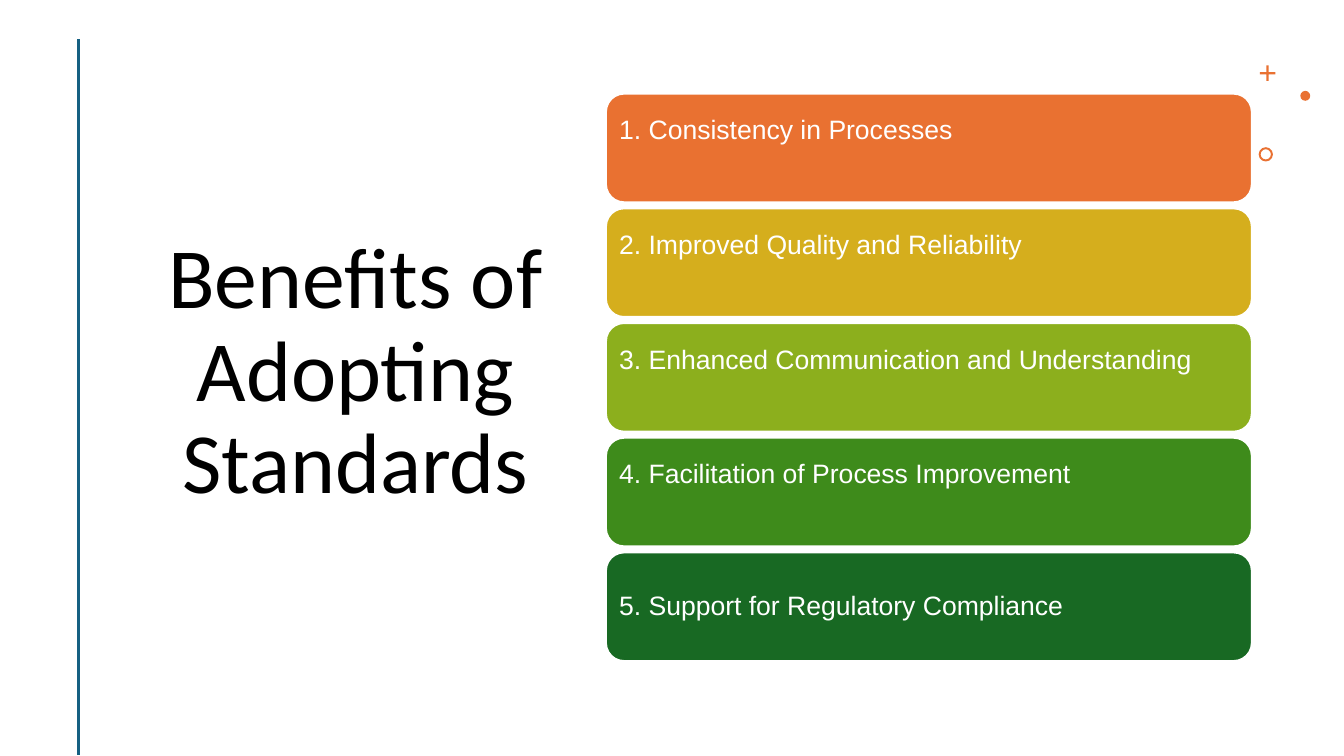
from lxml import etree
from pptx import Presentation
from pptx.dml.color import RGBColor
from pptx.enum.shapes import MSO_CONNECTOR, MSO_SHAPE
from pptx.enum.text import MSO_ANCHOR, MSO_AUTO_SIZE, PP_ALIGN
from pptx.oxml.ns import qn
from pptx.util import Cm, Pt

ROUNDED, CROSS = MSO_SHAPE.ROUNDED_RECTANGLE, MSO_SHAPE.CROSS
OVAL, DONUT = MSO_SHAPE.OVAL, MSO_SHAPE.DONUT
STRAIGHT = MSO_CONNECTOR.STRAIGHT
MIDDLE, NO_FIT = MSO_ANCHOR.MIDDLE, MSO_AUTO_SIZE.NONE
LEFT, CENTER = PP_ALIGN.LEFT, PP_ALIGN.CENTER
TITLE_ONLY = 5

TITLE = "Benefits of Adopting Standards"
# benefit, colour, extra room below the text in cm
BENEFITS = [
    ("1. Consistency in Processes", "orange", 0.84),
    ("2. Improved Quality and Reliability", "gold", 0.84),
    ("3. Enhanced Communication and Understanding", "lime", 0.84),
    ("4. Facilitation of Process Improvement", "green", 0.84),
    ("5. Support for Regulatory Compliance", "forest", 0),
]
# shape, left, top, size in cm, adjustments
ORNAMENTS = [
    (CROSS, 31.75, 1.65, 0.39, [0.43]),
    (OVAL, 32.77, 2.29, 0.25, []),
    (DONUT, 31.72, 3.71, 0.36, [0.14]),
]
COLORS = {
    "orange": "E97131", "gold": "D5AE1D", "lime": "8CAF1D",
    "green": "3E8B1B", "forest": "186923", "accent": "E97132",
    "rule": "156082", "black": "000000", "white": "FFFFFF",
}

BAR_LEFT, BAR_TOP, BAR_WIDTH, BAR_HEIGHT, BAR_PITCH = 15.27, 2.36, 16.28, 2.74, 2.89
INSET = 0.2

TITLE_FONT = {"name": "Calibri", "size": Pt(61.2)}
BAR_FONT = {"name": "Arial", "size": Pt(19)}
TITLE_PLACE = {"left": Cm(3.48), "top": Cm(1.65), "width": Cm(10.95), "height": Cm(15.52)}
FRAME = {"word_wrap": True, "auto_size": NO_FIT, "vertical_anchor": MIDDLE}


def color(name):
    return RGBColor.from_string(COLORS[name])


def apply(target, values):
    for name, value in values.items():
        setattr(target, name, value)


def write(shape, text, font, font_color, align):
    frame = shape.text_frame
    apply(frame, FRAME)
    frame.text = text
    paragraph = frame.paragraphs[0]
    apply(paragraph, {"alignment": align, "line_spacing": 0.9})
    run_font = paragraph.runs[0].font
    apply(run_font, font)
    run_font.color.rgb = color(font_color)


def add_filled(shapes, kind, left, top, width, height, fill, adjustments):
    shape = shapes.add_shape(kind, Cm(left), Cm(top), Cm(width), Cm(height))
    shape.shadow.inherit = False
    shape.fill.solid()
    shape.fill.fore_color.rgb = color(fill)
    shape.line.fill.background()
    for index, value in enumerate(adjustments):
        shape.adjustments[index] = value
    return shape


def add_rule(shapes):
    rule = shapes.add_connector(STRAIGHT, Cm(1.98), Cm(0.99), Cm(1.98), Cm(19.02))
    rule.line.color.rgb = color("rule")
    rule.line.width = Pt(2)
    etree.SubElement(rule.line._get_or_add_ln().getparent(), qn("a:effectLst"))


def add_benefits(shapes):
    bars = shapes.add_group_shape().shapes
    for row, (benefit, fill, room_below) in enumerate(BENEFITS):
        bar = add_filled(bars, ROUNDED, BAR_LEFT, BAR_TOP + row * BAR_PITCH,
                         BAR_WIDTH, BAR_HEIGHT, fill, [0.167])
        bar.line.color.rgb = color("white")
        bar.line.width = Pt(1.5)
        write(bar, benefit, BAR_FONT, "white", LEFT)
        apply(bar.text_frame, {
            "margin_left": Cm(INSET), "margin_right": Cm(INSET),
            "margin_top": Cm(INSET), "margin_bottom": Cm(INSET + room_below),
        })


def main():
    deck = Presentation()
    apply(deck, {"slide_width": Cm(33.87), "slide_height": Cm(19.05)})
    slide = deck.slides.add_slide(deck.slide_layouts[TITLE_ONLY])
    shapes = slide.shapes
    apply(shapes.title, TITLE_PLACE)
    write(shapes.title, TITLE, TITLE_FONT, "black", CENTER)
    add_rule(shapes)
    for kind, left, top, size, adjustments in ORNAMENTS:
        add_filled(shapes, kind, left, top, size, size, "accent", adjustments)
    add_benefits(shapes)
    deck.save("out.pptx")


if __name__ == "__main__":
    main()
